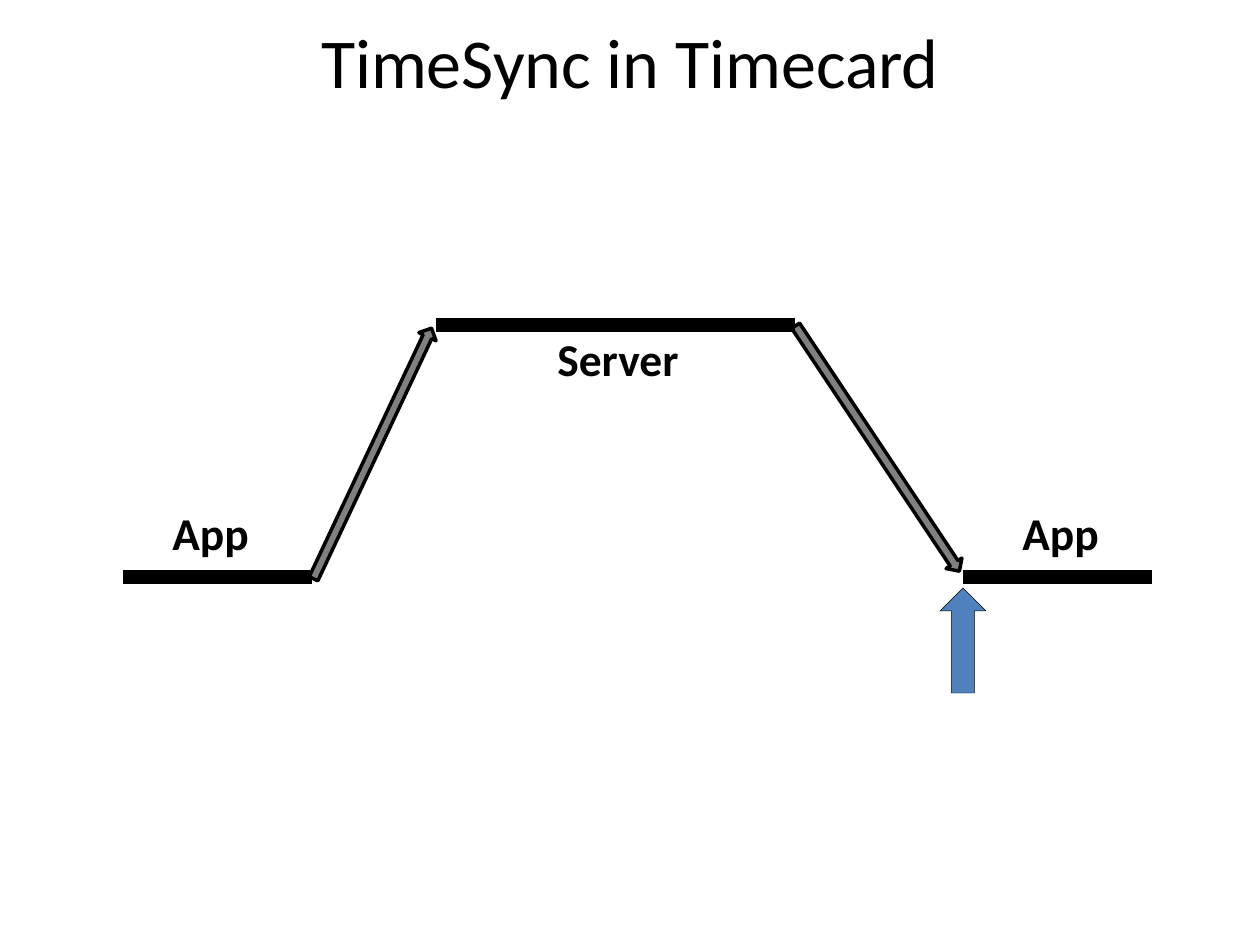
from typing import NamedTuple

from lxml.etree import SubElement
from pptx import Presentation
from pptx.dml.color import RGBColor
from pptx.enum.shapes import MSO_CONNECTOR, MSO_SHAPE
from pptx.enum.text import MSO_ANCHOR, MSO_AUTO_SIZE, PP_ALIGN
from pptx.oxml.ns import qn
from pptx.util import Emu, Pt

PX_PER_INCH = 126
FONT = "Calibri"
BLACK, GRAY, BLUE = "000000", "808080", "4F81BD"


class Arrow(NamedTuple):
    x: int
    y: int
    w: int
    h: int
    angle: float
    fill: str
    line_pt: float


class Stage(NamedTuple):
    x1: int
    x2: int
    y: int


class Label(NamedTuple):
    text: str
    x: int
    y: int
    w: int


APP_Y, SERVER_Y = 577, 325
APP_LABEL_Y, LABEL_H = 499, 68

MESSAGES = [
    Arrow(868, 301, 19, 295, 146.3, GRAY, 2),
    Arrow(363, 315, 19, 277, 25.2, GRAY, 2),
]
STAGES = [
    Stage(436, 795, SERVER_Y),
    Stage(123, 312, APP_Y),
    Stage(963, 1152, APP_Y),
]
LABELS = [
    Label("Server", 545, SERVER_Y, 154),
    Label("App", 160, APP_LABEL_Y, 106),
    Label("App", 1010, APP_LABEL_Y, 106),
]
POINTER = Arrow(940, 588, 46, 105, 0, BLUE, 0.25)


def px(n: int) -> Emu:
    return Emu(round(n * 914400 / PX_PER_INCH))


def rgb(color: str) -> RGBColor:
    return RGBColor.from_string(color)


def format_text(tf, size: int, bold: bool) -> None:
    for r in tf.paragraphs[0].runs:
        r.font.name = FONT
        r.font.size = Pt(size)
        r.font.bold = bold
        r.font.color.rgb = rgb(BLACK)


def add_title(s, text: str) -> None:
    sp = s.shapes.title
    sp.left, sp.top, sp.width, sp.height = px(63), px(6), px(1134), px(110)
    tf = sp.text_frame
    tf.text = text
    tf.vertical_anchor = MSO_ANCHOR.MIDDLE
    tf.paragraphs[0].alignment = PP_ALIGN.CENTER
    format_text(tf, 40, False)


def add_arrow(s, a: Arrow) -> None:
    sp = s.shapes.add_shape(MSO_SHAPE.UP_ARROW, px(a.x), px(a.y), px(a.w), px(a.h))
    sp.rotation = a.angle
    sp.shadow.inherit = False
    sp.fill.solid()
    sp.fill.fore_color.rgb = rgb(a.fill)
    sp.line.color.rgb = rgb(BLACK)
    sp.line.width = Pt(a.line_pt)


def add_stage(s, st: Stage) -> None:
    line = s.shapes.add_connector(
        MSO_CONNECTOR.STRAIGHT, px(st.x1), px(st.y), px(st.x2), px(st.y))
    line.line.color.rgb = rgb(BLACK)
    line.line.width = Pt(8)
    SubElement(line._element.spPr, qn("a:effectLst"))


def add_label(s, label: Label) -> None:
    sp = s.shapes.add_textbox(px(label.x), px(label.y), px(label.w), px(LABEL_H))
    tf = sp.text_frame
    tf.text = label.text
    tf.word_wrap = False
    tf.auto_size = MSO_AUTO_SIZE.SHAPE_TO_FIT_TEXT
    format_text(tf, 26, True)


def main() -> None:
    prs = Presentation()
    prs.slide_width, prs.slide_height = px(1260), px(945)
    s = prs.slides.add_slide(prs.slide_layouts[5])

    # Messages between app and server
    for message in MESSAGES:
        add_arrow(s, message)

    # Time spent in each stage
    for stage in STAGES:
        add_stage(s, stage)

    # Title and stage names
    add_title(s, "TimeSync in Timecard")
    for label in LABELS:
        add_label(s, label)

    # Pointer to the moment the reply arrives
    add_arrow(s, POINTER)

    prs.save("out.pptx")


if __name__ == "__main__":
    main()
